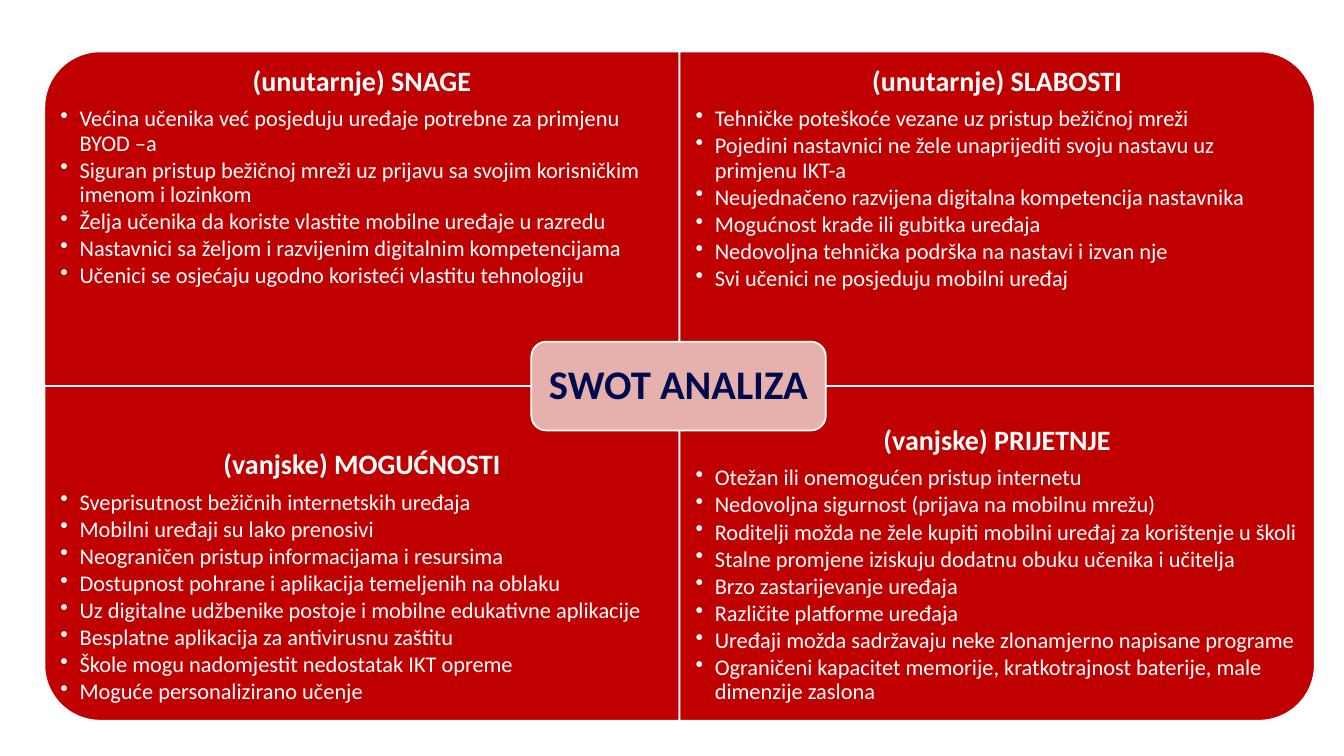
from pptx import Presentation, util as u
from pptx.dml.color import RGBColor
from pptx.enum import shapes, text
from pptx.oxml.ns import qn
from lxml import etree

LEFT, TOP, WIDTH, HEIGHT = 0.44, 0.51, 6.3, 3.32
TEXT_HEIGHT = 2.49

deck = Presentation()
deck.slide_width, deck.slide_height = u.Inches(13.33), u.Inches(7.5)
page = deck.slides.add_slide(deck.slide_layouts[6])


def add_panel(kind, left, top, width, height, fill, rotation=0):
    panel = page.shapes.add_shape(kind, *map(u.Inches, (left, top, width, height)))
    panel.shadow.inherit = False
    panel.rotation = rotation
    panel.fill.solid()
    panel.fill.fore_color.rgb = RGBColor.from_string(fill)
    panel.line.color.rgb = RGBColor.from_string("FFFFFF")
    panel.line.width = u.Pt(1.25)
    return panel


def write(para, words, size, color="FFFFFF", bold=False, after=0, bullet=False):
    para.alignment = text.PP_ALIGN.LEFT if bullet else text.PP_ALIGN.CENTER
    para.line_spacing = 0.9
    para.space_after = u.Pt(after)
    span = para.add_run()
    span.text = words
    span.font.name = "Calibri"
    span.font.size = u.Pt(size)
    span.font.bold = bold
    span.font.color.rgb = RGBColor.from_string(color)
    if bullet:
        para.level = 1
        props = para._p.get_or_add_pPr()
        props.set("marL", str(u.Inches(0.19)))
        props.set("indent", str(u.Inches(-0.19)))
        etree.SubElement(props, qn("a:buChar")).set("char", "•")


quadrants = [
    (0, 0, 270, "(unutarnje) SNAGE", [
        "Većina učenika već posjeduju uređaje potrebne za primjenu BYOD –a",
        "Siguran pristup bežičnoj mreži uz prijavu sa svojim korisničkim imenom i lozinkom",
        "Želja učenika da koriste vlastite mobilne uređaje u razredu",
        "Nastavnici sa željom i razvijenim digitalnim kompetencijama",
        "Učenici se osjećaju ugodno koristeći vlastitu tehnologiju",
    ]),
    (0, 1, 0, "(unutarnje) SLABOSTI", [
        "Tehničke poteškoće vezane uz pristup bežičnoj mreži",
        "Pojedini nastavnici ne žele unaprijediti svoju nastavu uz primjenu IKT-a",
        "Neujednačeno razvijena digitalna kompetencija nastavnika",
        "Mogućnost krađe ili gubitka uređaja",
        "Nedovoljna tehnička podrška na nastavi i izvan nje",
        "Svi učenici ne posjeduju mobilni uređaj",
    ]),
    (1, 0, 180, "(vanjske) MOGUĆNOSTI", [
        "Sveprisutnost bežičnih internetskih uređaja",
        "Mobilni uređaji su lako prenosivi",
        "Neograničen pristup informacijama i resursima",
        "Dostupnost pohrane i aplikacija temeljenih na oblaku",
        "Uz digitalne udžbenike postoje i mobilne edukativne aplikacije",
        "Besplatne aplikacija za antivirusnu zaštitu",
        "Škole mogu nadomjestit nedostatak IKT opreme",
        "Moguće personalizirano učenje",
    ]),
    (1, 1, 90, "(vanjske) PRIJETNJE", [
        "Otežan ili onemogućen pristup internetu",
        "Nedovoljna sigurnost (prijava na mobilnu mrežu)",
        "Roditelji možda ne žele kupiti mobilni uređaj za korištenje u školi",
        "Stalne promjene iziskuju dodatnu obuku učenika i učitelja",
        "Brzo zastarijevanje uređaja",
        "Različite platforme uređaja",
        "Uređaji možda sadržavaju neke zlonamjerno napisane programe",
        "Ograničeni kapacitet memorije, kratkotrajnost baterije, male dimenzije zaslona",
    ]),
]

for row, column, rotation, heading, points in quadrants:
    left, top = LEFT + column * WIDTH, TOP + row * HEIGHT
    sideways = rotation in (90, 270)
    width, height = (HEIGHT, WIDTH) if sideways else (WIDTH, HEIGHT)
    add_panel(shapes.MSO_SHAPE.ROUND_1_RECTANGLE,
              left + (WIDTH - width) / 2, top + (HEIGHT - height) / 2,
              width, height, "C00000", rotation)

    text_top = top + row * (HEIGHT - TEXT_HEIGHT)
    box = page.shapes.add_textbox(*map(u.Inches, (left, text_top, WIDTH, TEXT_HEIGHT)))
    frame = box.text_frame
    frame.word_wrap = True
    frame.vertical_anchor = text.MSO_ANCHOR.BOTTOM if row else text.MSO_ANCHOR.TOP
    frame.margin_left = frame.margin_right = u.Inches(0.16)
    frame.margin_top = frame.margin_bottom = u.Inches(0.16)
    write(frame.paragraphs[0], heading, 20, bold=True, after=7)
    for point in points:
        write(frame.add_paragraph(), point, 16, after=2.1, bullet=True)

center = add_panel(shapes.MSO_SHAPE.ROUNDED_RECTANGLE, 5.27, 3.39, 2.92, 0.88, "E6B1AC")
center.text_frame.word_wrap = True
center.text_frame.vertical_anchor = text.MSO_ANCHOR.MIDDLE
write(center.text_frame.paragraphs[0], "SWOT ANALIZA", 29, color="010A4F", bold=True)

deck.save("out.pptx")
